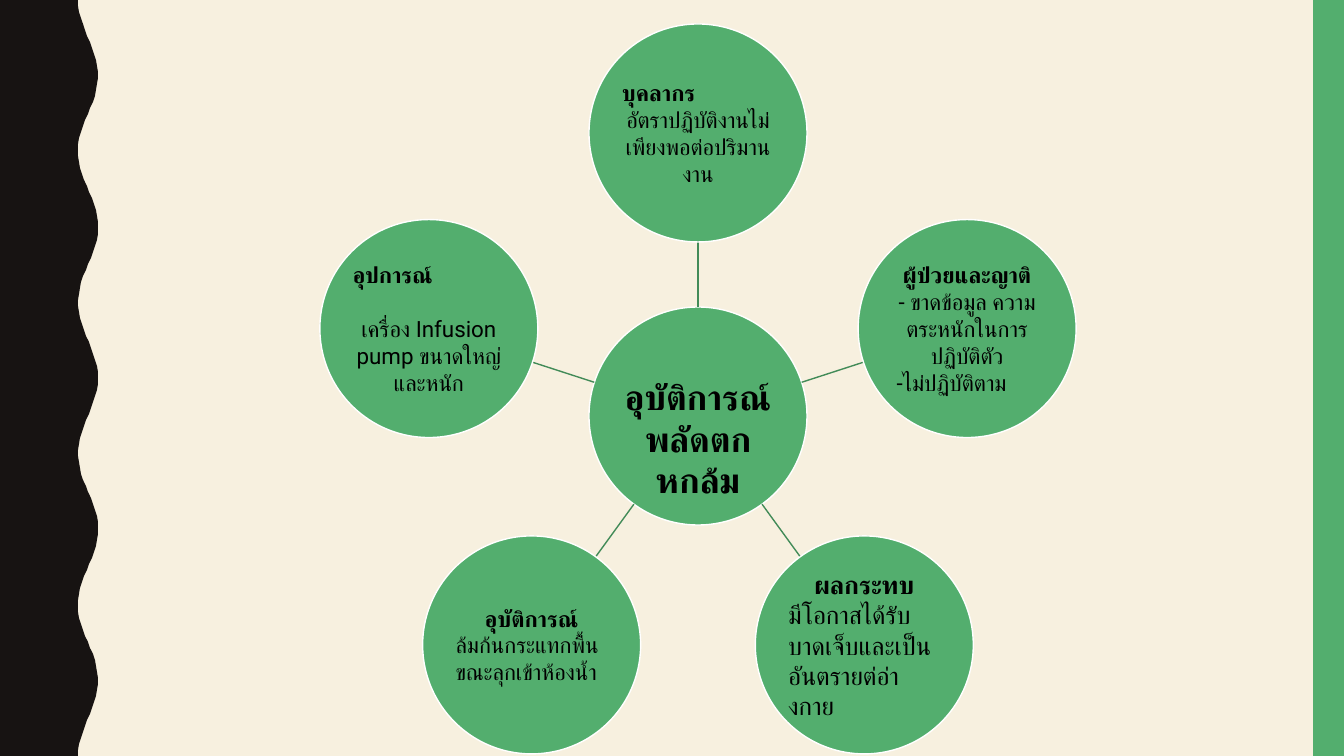
"""Build a hub-and-spoke slide on falls and their causes."""
import math
from lxml import etree
from pptx import Presentation, util as u
from pptx.dml import color
from pptx.enum import shapes, text
from pptx.oxml import ns

PX = 12192000 / 1344
WIDE, HIGH = 1344, 756
HUB = (698, 416)
RAD, ORBIT = 109, 283
GREEN, DARK, CREAM, SPOKE = "53AE6E", "171312", "F7F0DF", "428B58"
MID, LEFT = text.PP_ALIGN.CENTER, text.PP_ALIGN.LEFT

TOPIC = [("อุบัติการณ์", MID), ("พลัดตกหกล้ม", MID)]
NODES = [
    (16, 0, [("บุคลากร", LEFT),
             ("อัตราปฏิบัติงานไม่เพียงพอต่อปริมานงาน", MID)]),
    (16, 0, [("ผู้ป่วยและญาติ", MID),
             ("- ขาดข้อมูล ความตระหนักในการปฏิบัติตัว", MID),
             (" -ไม่ปฏิบัติตาม", LEFT)]),
    (18, 0, [("ผลกระทบ", MID),
             ("มีโอกาสได้รับบาดเจ็บและเป็นอันตรายต่อ่างกาย", LEFT)]),
    (16, 0, [("อุบัติการณ์", MID),
             ("ล้มก้นกระแทกพื้นขณะลุกเข้าห้องน้ำ", LEFT)]),
    (16, 19, [("อุปการณ์", LEFT),
              ("เครื่อง Infusion pump ขนาดใหญ่และหนัก", MID)]),
]


def px(num):
    """Turn pixels into EMU."""
    return u.Emu(round(num * PX))


def rgb(code):
    """Turn a hex string into a colour."""
    return color.RGBColor.from_string(code)


def paint(shape, fill, line=None):
    """Give a shape a flat fill and an optional thin outline."""
    shape.shadow.inherit = False
    shape.fill.solid()
    shape.fill.fore_color.rgb = rgb(fill)
    if line:
        shape.line.color.rgb = rgb(line)
        shape.line.width = u.Pt(1)
    else:
        shape.line.fill.background()


def wave(slide):
    """Draw the dark left edge with its five waves."""
    edge = [(88 - 10 * math.cos(math.tau * y * 5 / HIGH), y)
            for y in range(0, HIGH + 1, 6)]
    pen = slide.shapes.build_freeform(0, 0, scale=PX)
    pen.add_line_segments(edge + [(0, HIGH)], close=True)
    paint(pen.convert_to_shape(), DARK)


def bar(slide):
    """Draw the green right edge."""
    rect = slide.shapes.add_shape(
        shapes.MSO_SHAPE.RECTANGLE, px(1313), 0, px(WIDE - 1313), px(HIGH))
    paint(rect, GREEN)


def polar(angle, dist):
    """Find the point at an angle and distance from the hub."""
    return (HUB[0] + dist * math.cos(angle), HUB[1] + dist * math.sin(angle))


def spoke(slide, angle):
    """Join the hub to the circle at an angle."""
    ends = polar(angle, RAD) + polar(angle, ORBIT - RAD)
    line = slide.shapes.add_connector(
        shapes.MSO_CONNECTOR.STRAIGHT, *map(px, ends))
    line.line.color.rgb = rgb(SPOKE)
    line.line.width = u.Pt(1)
    etree.SubElement(line._element.spPr, ns.qn("a:effectLst"))


def disc(slide, spot, size, lines, gap=0, top=1, heads=1):
    """Draw a circle whose first lines are bold headings."""
    oval = slide.shapes.add_shape(
        shapes.MSO_SHAPE.OVAL, px(spot[0] - RAD), px(spot[1] - RAD),
        px(2 * RAD), px(2 * RAD))
    paint(oval, GREEN, "FFFFFF")
    frame = oval.text_frame
    frame.word_wrap = True
    frame.vertical_anchor = text.MSO_ANCHOR.MIDDLE
    frame.margin_left = frame.margin_right = frame.margin_bottom = px(1)
    frame.margin_top = px(top)
    frame.text = "\n".join(words for words, _ in lines)
    for row, (para, (_, align)) in enumerate(zip(frame.paragraphs, lines)):
        para.alignment = align
        for run in para.runs:
            run.font.name = "Roboto"
            run.font.size = u.Pt(size)
            run.font.bold = row < heads
            run.font.color.rgb = rgb("000000")
    frame.paragraphs[0].space_after = u.Pt(gap)


def main():
    """Build and save the slide."""
    deck = Presentation()
    deck.slide_width, deck.slide_height = px(WIDE), px(HIGH)
    slide = deck.slides.add_slide(deck.slide_layouts[6])
    slide.background.fill.solid()
    slide.background.fill.fore_color.rgb = rgb(CREAM)
    wave(slide)
    bar(slide)
    disc(slide, HUB, 25, TOPIC, top=45, heads=2)
    for turn, (size, gap, lines) in enumerate(NODES):
        angle = math.tau * turn / len(NODES) - math.pi / 2
        spoke(slide, angle)
        disc(slide, polar(angle, ORBIT), size, lines, gap)
    deck.save("out.pptx")


if __name__ == "__main__":
    main()
